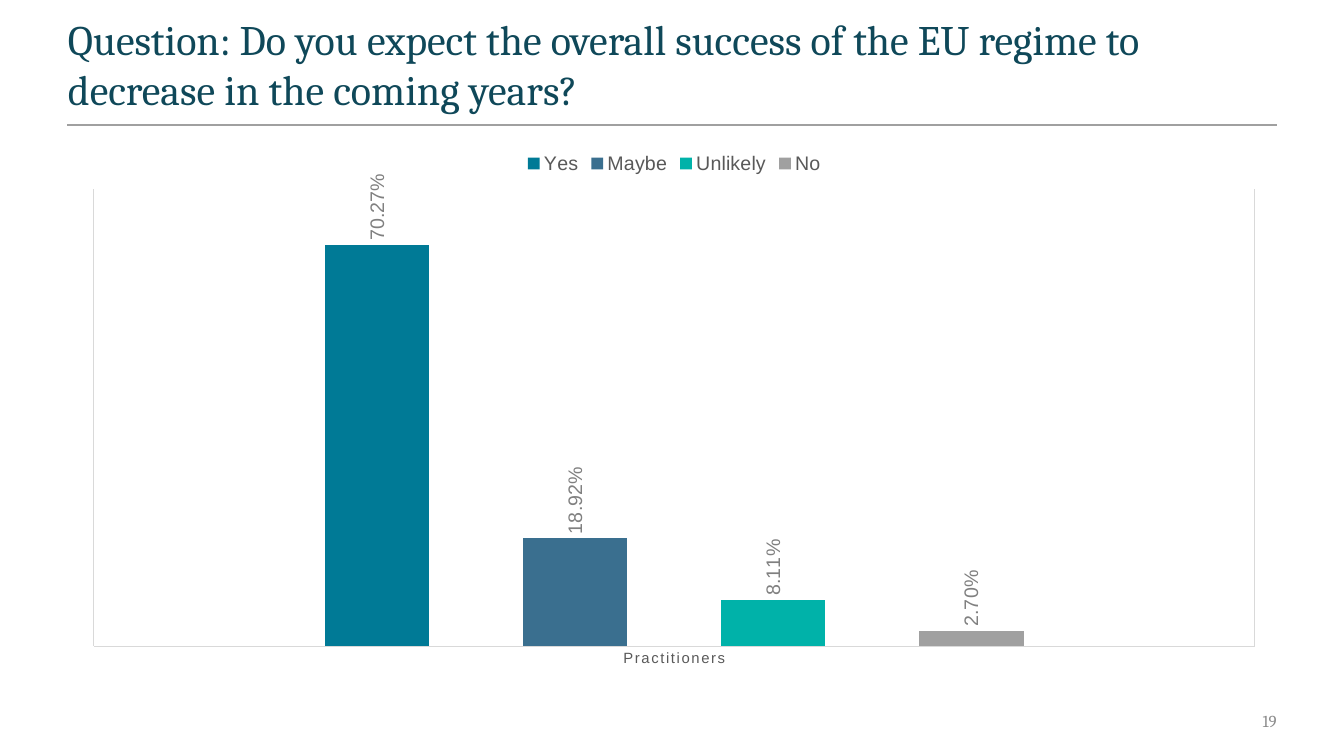
from dataclasses import dataclass

from lxml import etree
from pptx import Presentation
from pptx.chart.data import CategoryChartData
from pptx.dml.color import RGBColor
from pptx.enum.chart import (XL_CHART_TYPE, XL_LABEL_POSITION,
                             XL_LEGEND_POSITION, XL_TICK_MARK)
from pptx.enum.shapes import MSO_CONNECTOR
from pptx.enum.text import MSO_ANCHOR, PP_ALIGN
from pptx.oxml.ns import qn
from pptx.util import Pt

COLUMNS = XL_CHART_TYPE.COLUMN_CLUSTERED
OUTSIDE_END = XL_LABEL_POSITION.OUTSIDE_END
LEGEND_TOP = XL_LEGEND_POSITION.TOP
NO_TICKS = XL_TICK_MARK.NONE
STRAIGHT = MSO_CONNECTOR.STRAIGHT
TOP, MIDDLE = MSO_ANCHOR.TOP, MSO_ANCHOR.MIDDLE
LEFT, RIGHT = PP_ALIGN.LEFT, PP_ALIGN.RIGHT


@dataclass(frozen=True)
class Theme:
    heading_font: str = "Cambria"
    chart_font: str = "Arial"
    title: str = "0F4859"
    rule: str = "A0A0A0"
    page_number: str = "8C8C8C"
    axis_text: str = "595959"
    axis_line: str = "D9D9D9"
    label: str = "808080"
    title_size: float = 30
    number_size: float = 12
    chart_size: float = 14
    axis_size: float = 10.6


ANSWERS = [
    ("Yes", 0.7027, "007A96"),
    ("Maybe", 0.1892, "3A6F8F"),
    ("Unlikely", 0.0811, "00B2A9"),
    ("No", 0.027, "A0A0A0"),
]


def set_font(font, name, size, color):
    font.name = name
    font.size = Pt(size)
    font.color.rgb = RGBColor.from_string(color)


def set_line(line, color, width):
    line.color.rgb = RGBColor.from_string(color)
    line.width = Pt(width)


def place_plot(chart, **box):
    """Fix the inner plot area; x, y, w and h are fractions of the chart."""
    plot_area = chart.plots[0]._element.getparent()
    layout = plot_area.find(qn("c:layout"))
    if layout is None:
        layout = etree.Element(qn("c:layout"))
        plot_area.insert(0, layout)
    manual = etree.SubElement(layout, qn("c:manualLayout"))
    settings = {"layoutTarget": "inner", "xMode": "edge", "yMode": "edge", **box}
    for tag, val in settings.items():
        etree.SubElement(manual, qn(f"c:{tag}")).set("val", str(val))


class SlideBuilder:
    def __init__(self, slide, theme):
        self.s = slide
        self.theme = theme

    def text(self, words, box, size, color, align=LEFT, anchor=TOP, right_inset=7.2):
        sp = self.s.shapes.add_textbox(*map(Pt, box))
        tf = sp.text_frame
        tf.word_wrap = True
        tf.vertical_anchor = anchor
        tf.margin_right = Pt(right_inset)
        p = tf.paragraphs[0]
        p.alignment = align
        r = p.add_run()
        r.text = words
        set_font(r.font, self.theme.heading_font, size, color)

    def rule(self, x1, x2, y):
        line = self.s.shapes.add_connector(STRAIGHT, Pt(x1), Pt(y), Pt(x2), Pt(y))
        set_line(line.line, self.theme.rule, 1)
        etree.SubElement(line._element.spPr, qn("a:effectLst"))

    def column_chart(self, category, answers, box):
        t = self.theme
        data = CategoryChartData(number_format="0.00%")
        data.categories = [category]
        for name, share, _ in answers:
            data.add_series(name, [share])
        chart = self.s.shapes.add_chart(COLUMNS, *map(Pt, box), data).chart
        chart.has_title = False
        chart.font.name = t.chart_font
        chart.font.size = Pt(10)
        chart.has_legend = True
        chart.legend.position = LEGEND_TOP
        chart.legend.include_in_layout = False
        set_font(chart.legend.font, t.chart_font, t.chart_size, t.axis_text)
        self.axes(chart)
        plot = chart.plots[0]
        plot.vary_by_categories = False
        plot.gap_width = 444
        plot.overlap = -90
        for series, (_, _, color) in zip(plot.series, answers):
            self.column(series, color)
        place_plot(chart, x=0.02, y=0.09, w=0.96, h=0.85)

    def axes(self, chart):
        t = self.theme
        axis = chart.category_axis
        axis.major_tick_mark = axis.minor_tick_mark = NO_TICKS
        axis.has_major_gridlines = True
        set_line(axis.major_gridlines.format.line, t.axis_line, 0.75)
        set_line(axis.format.line, t.axis_line, 0.75)
        font = axis.tick_labels.font
        set_font(font, t.chart_font, t.axis_size, t.axis_text)
        axis._element.find(".//" + qn("a:defRPr")).set("spc", "120")
        values = chart.value_axis
        values.has_major_gridlines = False
        values.minimum_scale, values.maximum_scale = 0, 0.8
        values.visible = False

    def column(self, series, color):
        t = self.theme
        series.format.fill.solid()
        series.format.fill.fore_color.rgb = RGBColor.from_string(color)
        series.invert_if_negative = False
        labels = series.data_labels
        labels.show_value = True
        labels.position = OUTSIDE_END
        labels.number_format = "0.00%"
        labels.number_format_is_linked = False
        set_font(labels.font, t.chart_font, t.chart_size, t.label)
        body = labels._element.find(".//" + qn("a:bodyPr"))
        body.set("rot", "-5400000")
        body.set("vert", "horz")


def main():
    prs = Presentation()
    prs.slide_width, prs.slide_height = Pt(960), Pt(540)
    theme = Theme()
    page = SlideBuilder(prs.slides.add_slide(prs.slide_layouts[6]), theme)
    page.rule(48, 912, 89.3)
    page.text("Question: Do you expect the overall success of the EU regime to "
              "decrease in the coming years?",
              (41.5, 5.8, 864, 48), theme.title_size, theme.title)
    page.text("19", (696, 500.4, 216, 28.8), theme.number_size,
              theme.page_number, RIGHT, MIDDLE, right_inset=0)
    page.column_chart("Practitioners", ANSWERS, (49.7, 100.8, 864, 383.8))
    prs.save("out.pptx")


if __name__ == "__main__":
    main()
